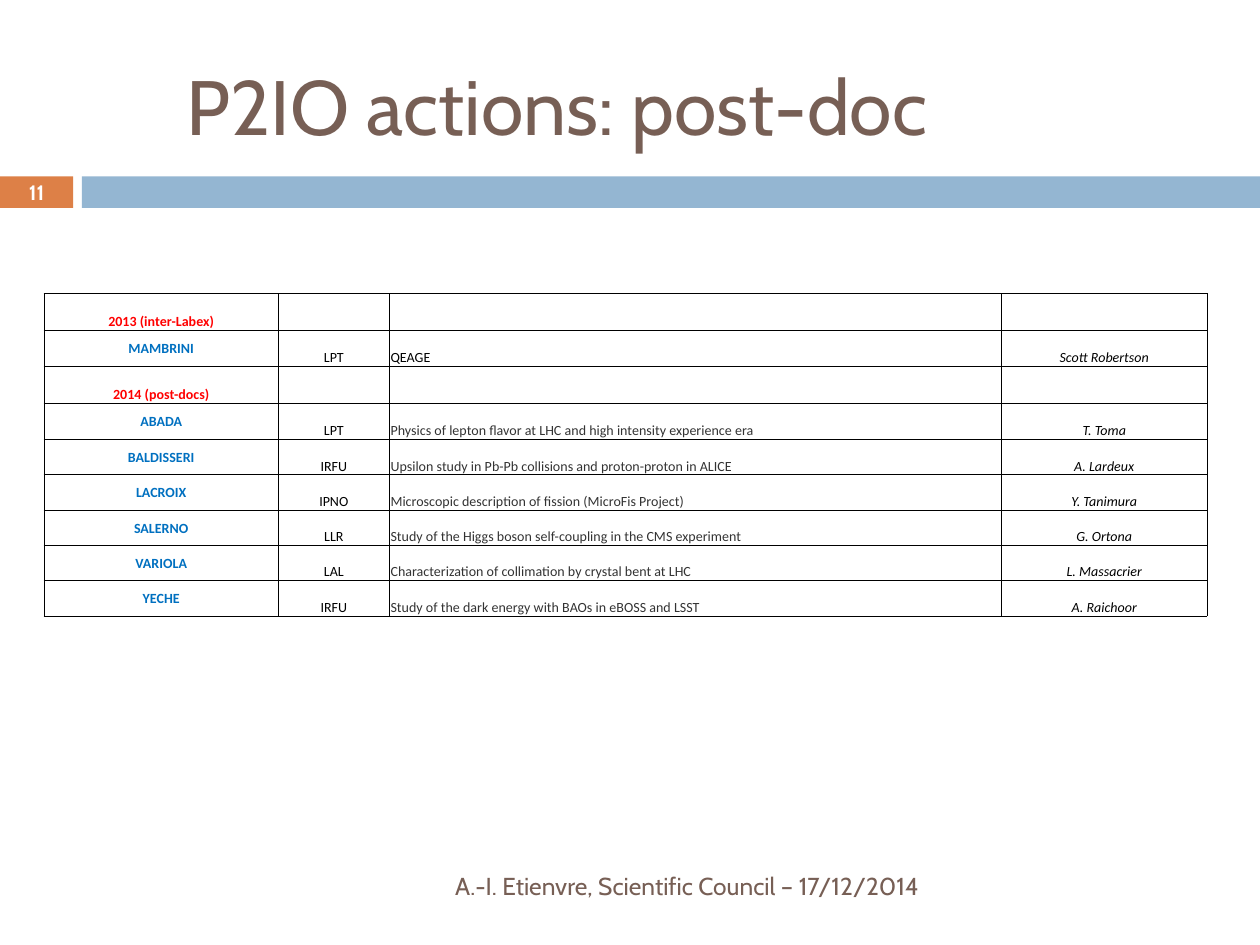
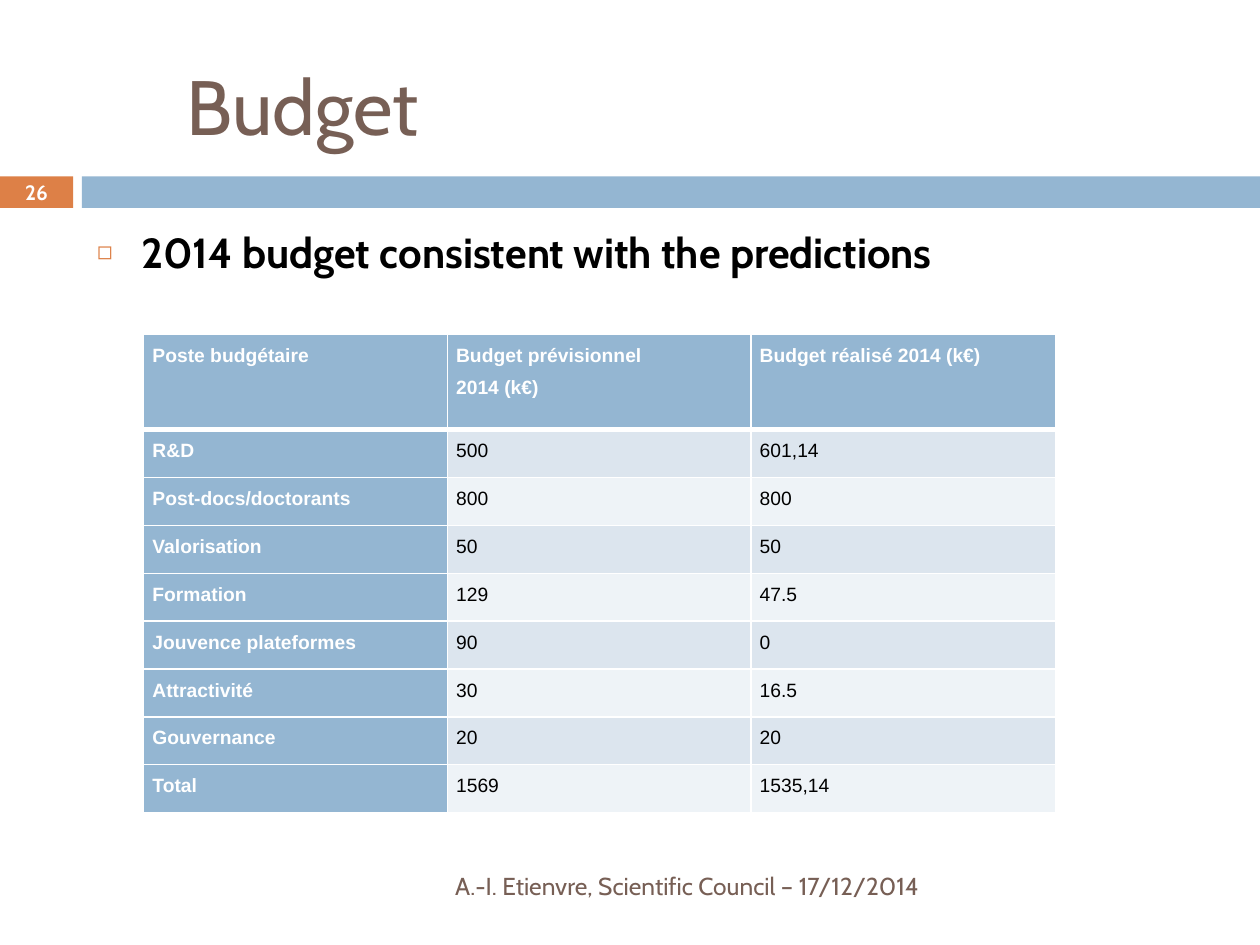
"""Build the post-doc and budget slides of the P2IO Scientific Council talk."""
from lxml.etree import SubElement
from pptx import Presentation
from pptx.dml.color import RGBColor
from pptx.enum.shapes import MSO_SHAPE
from pptx.enum.text import MSO_ANCHOR, PP_ALIGN
from pptx.oxml.ns import qn
from pptx.util import Inches, Pt

COLOURS = {
    "brown": "775F55", "orange": "DD8047", "blue": "94B6D2",
    "white": "FFFFFF", "black": "000000", "grey": "333333",
    "red": "FF0000", "name": "0070C0",
    "band_dark": "DCE5EE", "band_light": "EEF3F7",
}
FOOTER = "A.-I. Etienvre, Scientific Council – 17/12/2014 "


def write(frame, text, size, font, colour, align=PP_ALIGN.LEFT, bold=False, italic=False,
          anchor=MSO_ANCHOR.MIDDLE):
    frame.text = text
    frame.word_wrap = True
    frame.vertical_anchor = anchor
    for paragraph in frame.paragraphs:
        paragraph.alignment = align
        for run in paragraph.runs:
            run.font.size = Pt(size)
            run.font.name = font
            run.font.bold = bold
            run.font.italic = italic
            run.font.color.rgb = RGBColor.from_string(COLOURS[colour])


def frame_cell(cell, colour, margins, widths):
    cell.margin_left, cell.margin_top, cell.margin_right, cell.margin_bottom = map(Inches, margins)
    properties = cell._tc.get_or_add_tcPr()
    for side, width in zip(("lnL", "lnR", "lnT", "lnB"), widths):
        line = SubElement(properties, qn(f"a:{side}"), w=str(Pt(width)))
        fill = SubElement(line, qn("a:solidFill"))
        SubElement(fill, qn("a:srgbClr"), val=COLOURS[colour])


presentation = Presentation()
presentation.slide_width = Inches(10)
presentation.slide_height = Inches(7.5)

slides = []
for layout, title, number in ((5, "P2IO actions: post-doc", "11"), (1, "Budget", "26")):
    slide = presentation.slides.add_slide(presentation.slide_layouts[layout])
    slides.append(slide)
    for left, width, colour in ((0, 0.58, "orange"), (0.65, 9.35, "blue")):
        band = slide.shapes.add_shape(
            MSO_SHAPE.RECTANGLE, Inches(left), Inches(1.4), Inches(width), Inches(0.25))
        band.shadow.inherit = False
        band.fill.solid()
        band.fill.fore_color.rgb = RGBColor.from_string(COLOURS[colour])
        band.line.fill.background()
    heading = slide.shapes.title
    heading.left, heading.top = Inches(1.38), Inches(0.29)
    heading.width, heading.height = Inches(8.78), Inches(1.08)
    write(heading.text_frame, title, 44, "Cabin", "brown")
    footer = slide.shapes.add_textbox(Inches(1.51), Inches(6.83), Inches(5.93), Inches(0.4))
    write(footer.text_frame, FOOTER, 14, "Cabin", "brown", PP_ALIGN.RIGHT)
    page = slide.shapes.add_textbox(Inches(0), Inches(1.39), Inches(0.58), Inches(0.27))
    page.text_frame.margin_top = page.text_frame.margin_bottom = 0
    write(page.text_frame, number, 11.9, "Cabin", "white", PP_ALIGN.CENTER, bold=True)

postdoc_slide, budget_slide = slides

postdocs = [
    ("2013 (inter-Labex)", "", "", ""),
    ("MAMBRINI", "LPT", "QEAGE", "Scott Robertson"),
    ("2014 (post-docs)", "", "", ""),
    ("ABADA", "LPT", "Physics of lepton flavor at LHC and high intensity experience era", "T. Toma"),
    ("BALDISSERI", "IRFU", "Upsilon study in Pb-Pb collisions and proton-proton in ALICE", "A. Lardeux"),
    ("LACROIX", "IPNO", "Microscopic description of fission (MicroFis Project)", "Y. Tanimura"),
    ("SALERNO", "LLR", "Study of the Higgs boson self-coupling in the CMS experiment", "G. Ortona"),
    ("VARIOLA", "LAL", "Characterization of collimation by crystal bent at LHC", "L. Massacrier"),
    ("YECHE", "IRFU", "Study of the dark energy with BAOs in eBOSS and LSST", "A. Raichoor"),
]
postdoc_table = postdoc_slide.shapes.add_table(
    len(postdocs), 4, Inches(0.35), Inches(2.33), Inches(9.23), Inches(2.58)).table
postdoc_table.first_row = postdoc_table.horz_banding = False
for column, width in zip(postdoc_table.columns, (1.86, 0.88, 4.86, 1.63)):
    column.width = Inches(width)
for row_index, values in enumerate(postdocs):
    postdoc_table.rows[row_index].height = Inches(0.29 if row_index < 4 else 0.28)
    is_year = not values[1]
    for column_index, value in enumerate(values):
        cell = postdoc_table.cell(row_index, column_index)
        frame_cell(cell, "black", (0.01, 0.01, 0.01, 0), [0.5] * 4)
        cell.fill.background()
        is_name = column_index == 0 and not is_year
        topic_colour = "black" if value == "QEAGE" else "grey"
        colour = ("red" if is_year else "name", "black", topic_colour, "black")[column_index]
        write(cell.text_frame, value, 8, "Calibri", colour,
              PP_ALIGN.LEFT if column_index == 2 else PP_ALIGN.CENTER,
              bold=column_index == 0, italic=column_index == 3)
        cell.vertical_anchor = MSO_ANCHOR.MIDDLE if is_name else MSO_ANCHOR.BOTTOM
        if not value:
            SubElement(cell.text_frame.paragraphs[0]._p, qn("a:endParaRPr"), sz="800")

body = budget_slide.placeholders[1]
body.left, body.top, body.width, body.height = map(Inches, (0.67, 1.75, 8.92, 4.92))
write(body.text_frame, "2014 budget consistent with the predictions", 24, "Cabin", "black",
      bold=True, anchor=MSO_ANCHOR.TOP)
message = body.text_frame.paragraphs[0]
message.space_before = Pt(0)
bullet = message._p.get_or_add_pPr()
bullet.set("marL", str(Inches(0.35)))
bullet.set("indent", str(Inches(-0.35)))
bullet_colour = SubElement(bullet, qn("a:buClr"))
SubElement(bullet_colour, qn("a:srgbClr"), val=COLOURS["orange"])
SubElement(bullet, qn("a:buSzPct"), val="60000")
SubElement(bullet, qn("a:buChar"), char="◻")

budget = [
    ("Poste budgétaire", "Budget prévisionnel\n2014 (k€)", "Budget réalisé 2014 (k€)"),
    ("R&D", "500", "601,14"),
    ("Post-docs/doctorants", "800", "800"),
    ("Valorisation", "50", "50"),
    ("Formation", "129", "47.5"),
    ("Jouvence plateformes", "90", "0"),
    ("Attractivité", "30", "16.5"),
    ("Gouvernance", "20", "20"),
    ("Total", "1569", "1535,14"),
]
budget_table = budget_slide.shapes.add_table(
    len(budget), 3, Inches(1.14), Inches(2.65), Inches(7.24), Inches(3.78)).table
for column, width in zip(budget_table.columns, (2.41, 2.41, 2.42)):
    column.width = Inches(width)
for row_index, values in enumerate(budget):
    budget_table.rows[row_index].height = Inches(0.38 if row_index else 0.76)
    band_colour = "band_dark" if row_index % 2 else "band_light"
    top = 3 if row_index == 1 else 1
    bottom = 3 if row_index == 0 else 1
    for column_index, value in enumerate(values):
        cell = budget_table.cell(row_index, column_index)
        is_header = row_index == 0 or column_index == 0
        frame_cell(cell, "white", (0.07, 0, 0.07, 0), (1, 1, top, bottom))
        cell.fill.solid()
        cell.fill.fore_color.rgb = RGBColor.from_string(COLOURS["blue" if is_header else band_colour])
        write(cell.text_frame, value, 11, "Arial", "white" if is_header else "black",
              PP_ALIGN.JUSTIFY, bold=is_header)
        cell.vertical_anchor = MSO_ANCHOR.TOP
        for paragraph in cell.text_frame.paragraphs:
            paragraph.line_spacing = 1.5

presentation.save("out.pptx")
